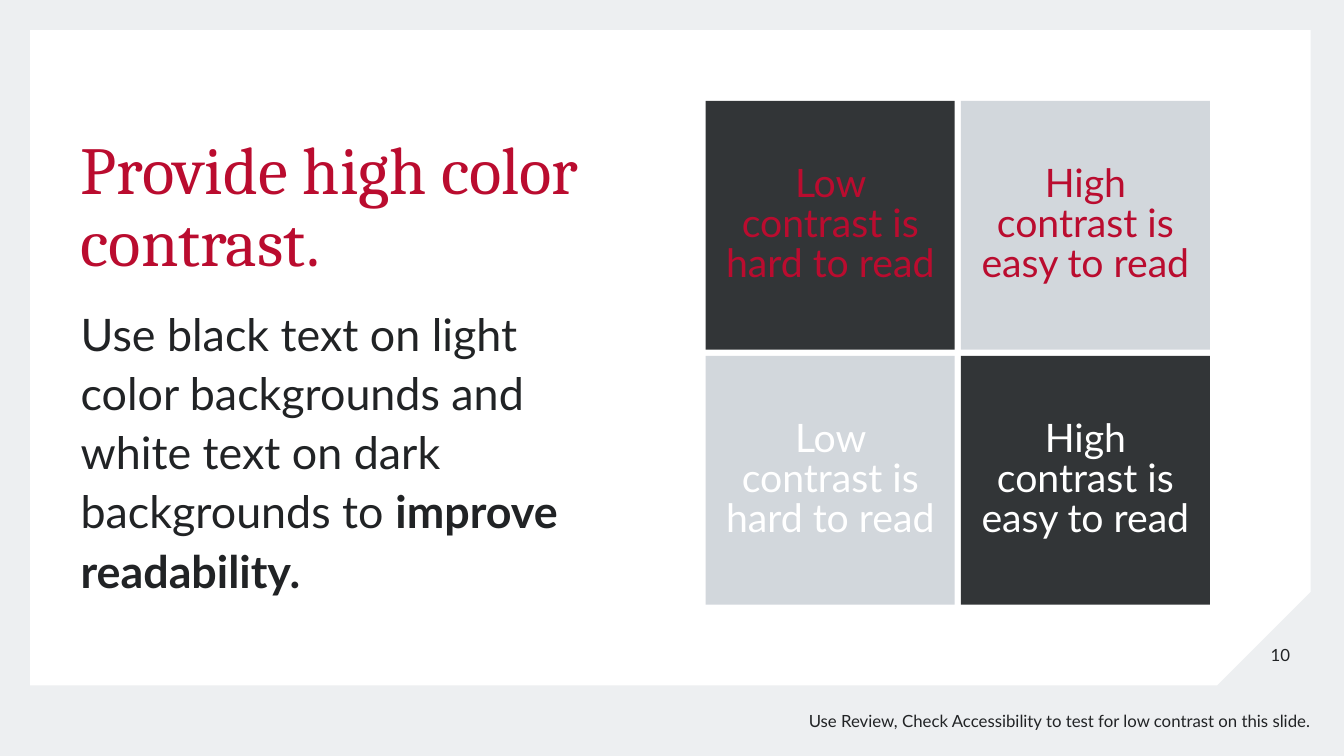
from dataclasses import dataclass

from pptx import Presentation
from pptx.dml.color import RGBColor
from pptx.enum.shapes import MSO_SHAPE as Preset
from pptx.enum.text import MSO_ANCHOR as Anchor, PP_ALIGN as Align
from pptx.shapes.autoshape import Shape
from pptx.slide import Slide
from pptx.util import Inches, Pt

COLORS = {
    "backdrop": "EDEFF1",
    "white": "FFFFFF",
    "red": "BA0C2F",
    "ink": "212325",
    "dark": "323537",
    "light": "D2D7DC",
}

TILE_SIZE = 2.47
TILE_STEP = 2.53
GRID_LEFT, GRID_TOP = 7, 1


@dataclass
class TextStyle:
    size: float
    color: str = "ink"
    font: str = "Lato"
    align: Align = Align.LEFT
    anchor: Anchor = Anchor.MIDDLE
    insets: tuple[float, float, float, float] = (0.1, 0.1, 0.1, 0.1)
    line_spacing: float = 1.0


@dataclass
class TextBlock:
    left: float
    top: float
    width: float
    height: float
    text: str
    style: TextStyle
    bold_ending: str = ""


@dataclass
class Tile:
    column: int
    row: int
    text: str
    fill: str
    color: str


def rgb(name: str) -> RGBColor:
    return RGBColor.from_string(COLORS[name])


def write_text(box: Shape, text: str, style: TextStyle, bold_ending: str = "") -> None:
    frame = box.text_frame
    frame.text = text
    frame.word_wrap = True
    frame.vertical_anchor = style.anchor
    (frame.margin_left, frame.margin_top,
     frame.margin_right, frame.margin_bottom) = map(Inches, style.insets)
    para = frame.paragraphs[0]
    para.alignment = style.align
    para.line_spacing = style.line_spacing
    if bold_ending:
        ending = para.add_run()
        ending.text = bold_ending
        ending.font.bold = True
    for span in para.runs:
        span.font.size = Pt(style.size)
        span.font.name = style.font
        span.font.color.rgb = rgb(style.color)


def add_filled(page: Slide, preset: Preset, left: float, top: float,
               width: float, height: float, fill: str) -> Shape:
    shape = page.shapes.add_shape(
        preset, Inches(left), Inches(top), Inches(width), Inches(height))
    shape.shadow.inherit = False
    shape.fill.solid()
    shape.fill.fore_color.rgb = rgb(fill)
    shape.line.fill.background()
    return shape


def add_block(page: Slide, block: TextBlock) -> None:
    box = page.shapes.add_textbox(
        Inches(block.left), Inches(block.top), Inches(block.width), Inches(block.height))
    write_text(box, block.text, block.style, block.bold_ending)


def add_tile(page: Slide, tile: Tile) -> None:
    shape = add_filled(
        page, Preset.RECTANGLE, GRID_LEFT + tile.column * TILE_STEP,
        GRID_TOP + tile.row * TILE_STEP, TILE_SIZE, TILE_SIZE, tile.fill)
    style = TextStyle(28, tile.color, align=Align.CENTER,
                      insets=(0.2, 0.2, 0.2, 0.2), line_spacing=0.85)
    write_text(shape, tile.text, style)


LOW = "Low contrast is hard to read"
HIGH = "High contrast is easy to read"
TILES = [
    Tile(0, 0, LOW, "dark", "red"),
    Tile(1, 0, HIGH, "light", "red"),
    Tile(0, 1, LOW, "light", "white"),
    Tile(1, 1, HIGH, "dark", "white"),
]

BLOCKS = [
    # Slide number
    TextBlock(12.4, 6.2, 0.6, 0.6, "10", TextStyle(12, align=Align.CENTER)),
    # Title
    TextBlock(0.3, 0.3, 6, 2.49, "Provide high color contrast.",
              TextStyle(48, "red", "Cambria", anchor=Anchor.BOTTOM,
                        insets=(0.5, 0.3, 0.5, 0), line_spacing=0.9)),
    # Body
    TextBlock(0.3, 2.79, 6, 4.01,
              "Use black text on light color backgrounds and white text "
              "on dark backgrounds to ",
              TextStyle(32, anchor=Anchor.TOP, insets=(0.5, 0.2, 0.5, 0.3),
                        line_spacing=1.1),
              bold_ending="improve readability."),
    # Footer tip
    TextBlock(4, 6.8, 9, 0.7,
              "Use Review, Check Accessibility to test for low contrast on this slide.",
              TextStyle(12, align=Align.RIGHT, insets=(0, 0.1, 0, 0.1))),
]


def main() -> None:
    deck = Presentation()
    deck.slide_width, deck.slide_height = Inches(13.33), Inches(7.5)
    page = deck.slides.add_slide(deck.slide_layouts[6])
    page.background.fill.solid()
    page.background.fill.fore_color.rgb = rgb("backdrop")

    # White panel, flipped so that the cut corner is at the bottom right
    panel = add_filled(page, Preset.SNIP_1_RECTANGLE, 0.3, 0.3, 12.7, 6.5, "white")
    panel.adjustments[0] = 0.143
    panel.element.spPr.xfrm.set("flipV", "1")

    for block in BLOCKS:
        add_block(page, block)
    for tile in TILES:
        add_tile(page, tile)

    deck.save("out.pptx")


if __name__ == "__main__":
    main()
